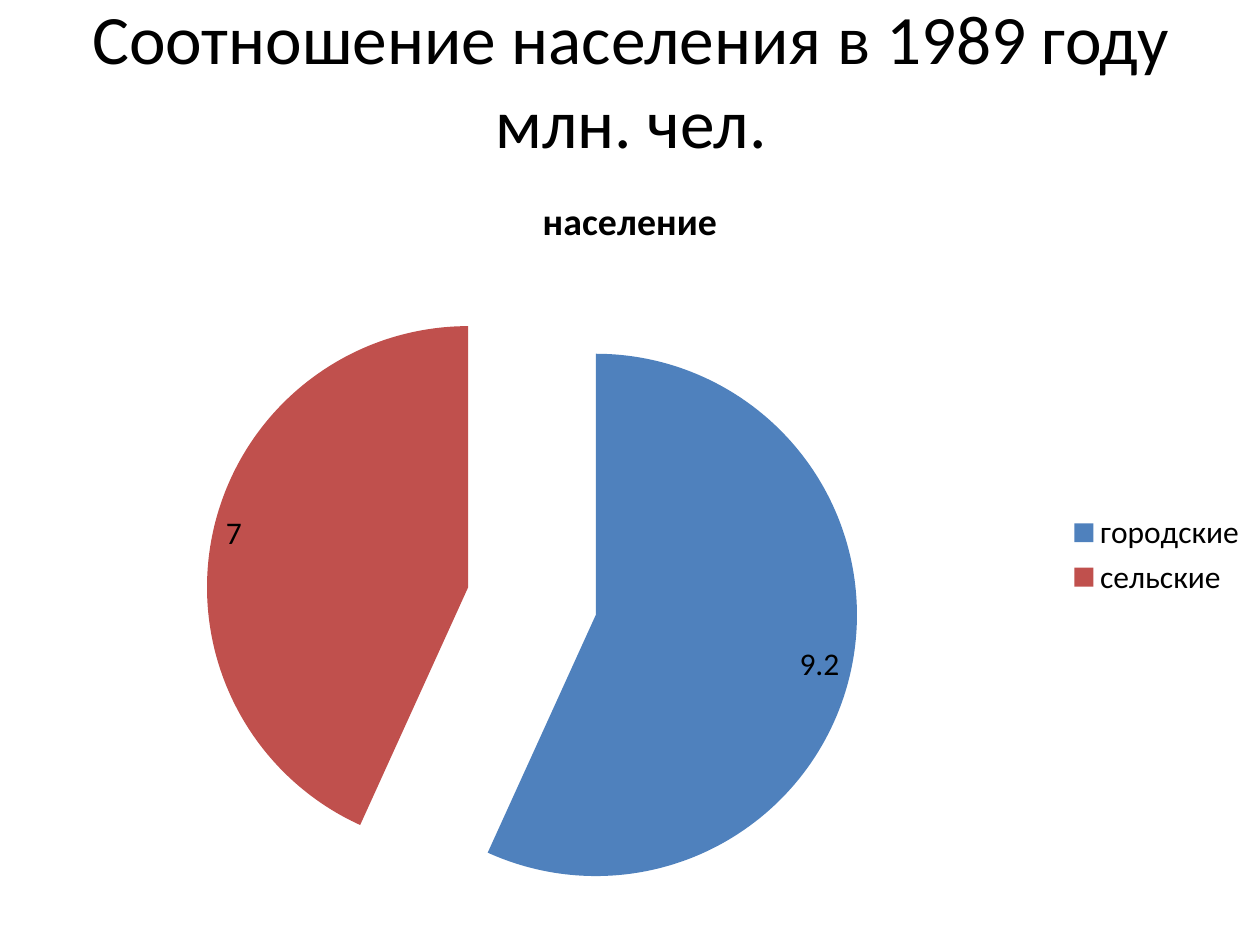
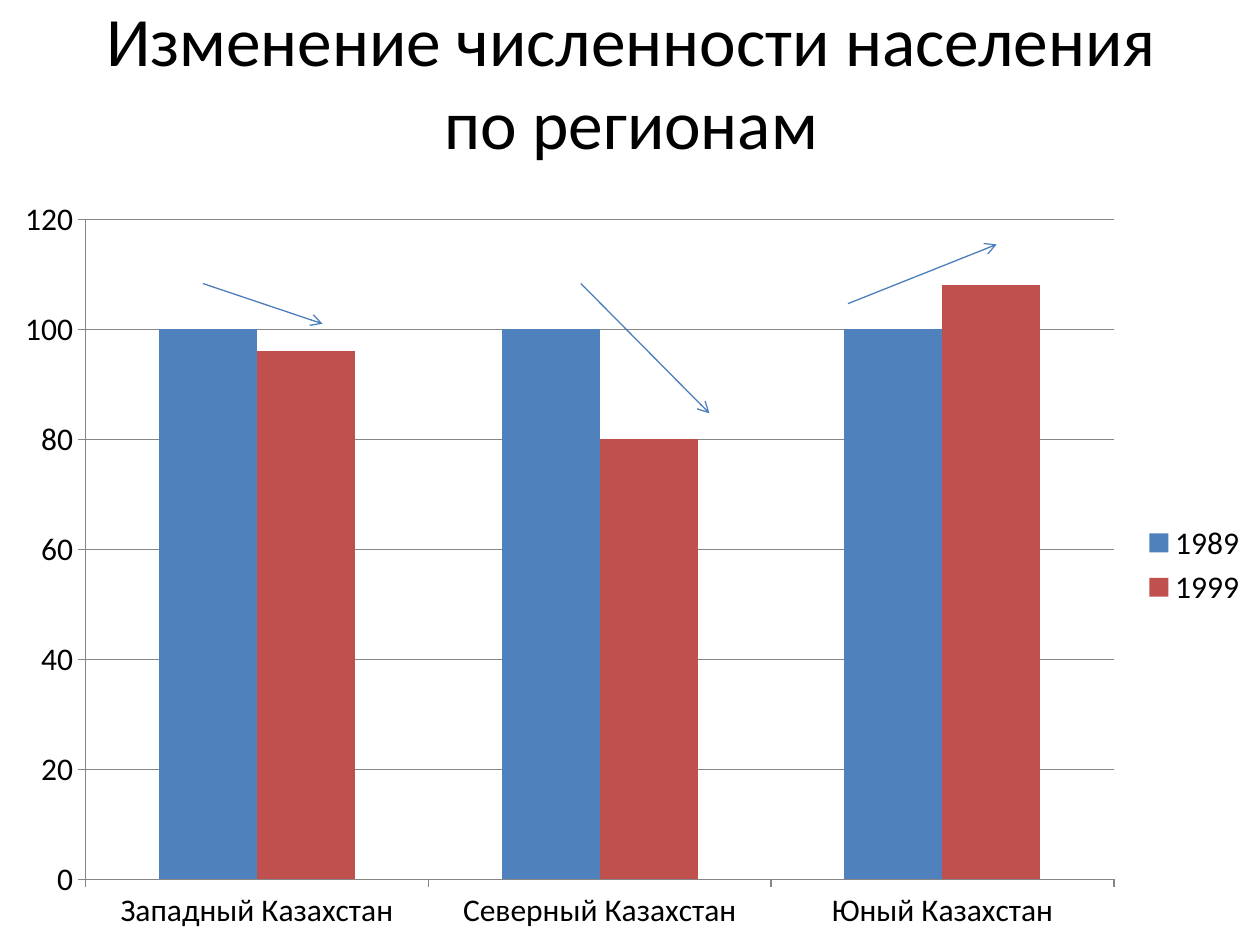
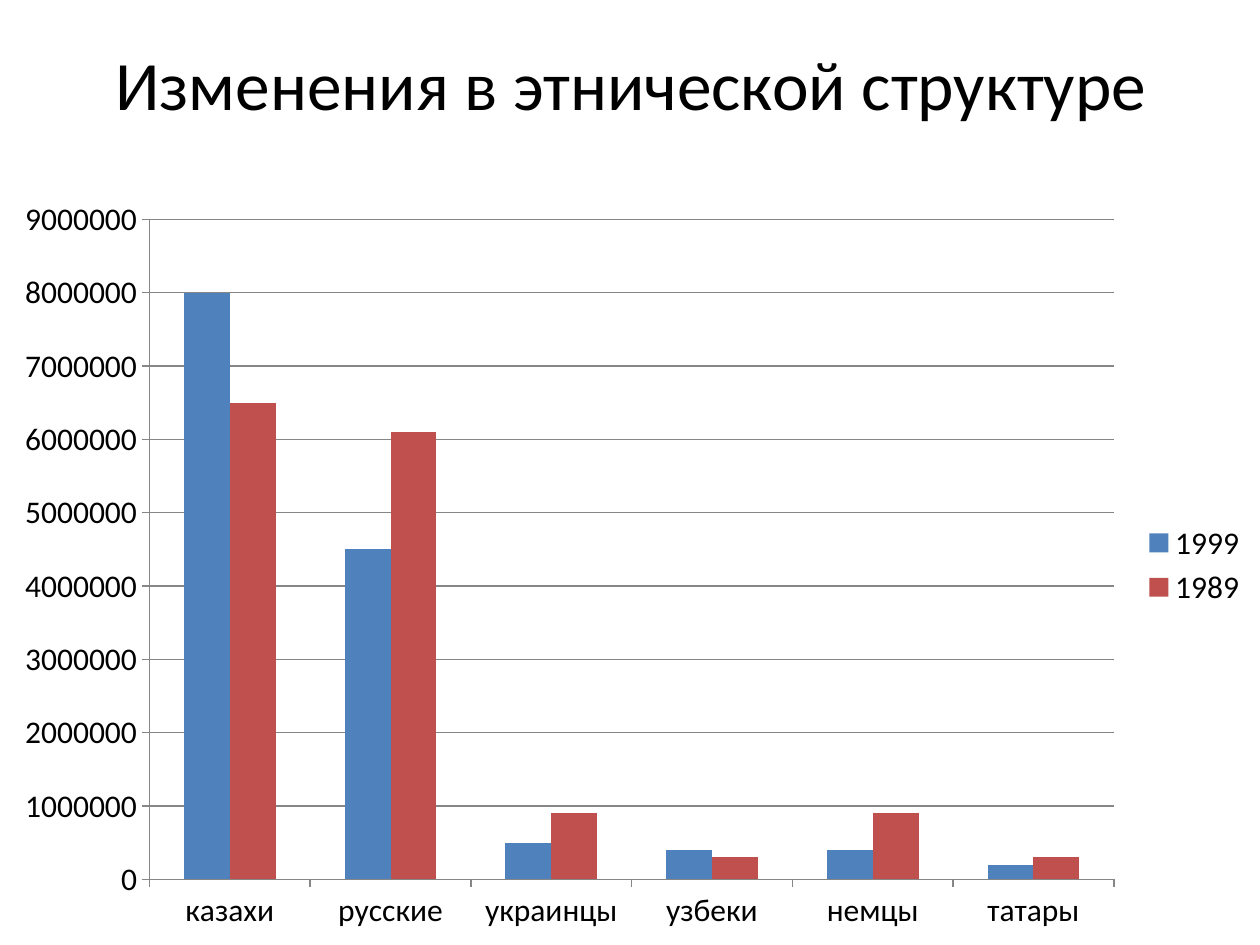
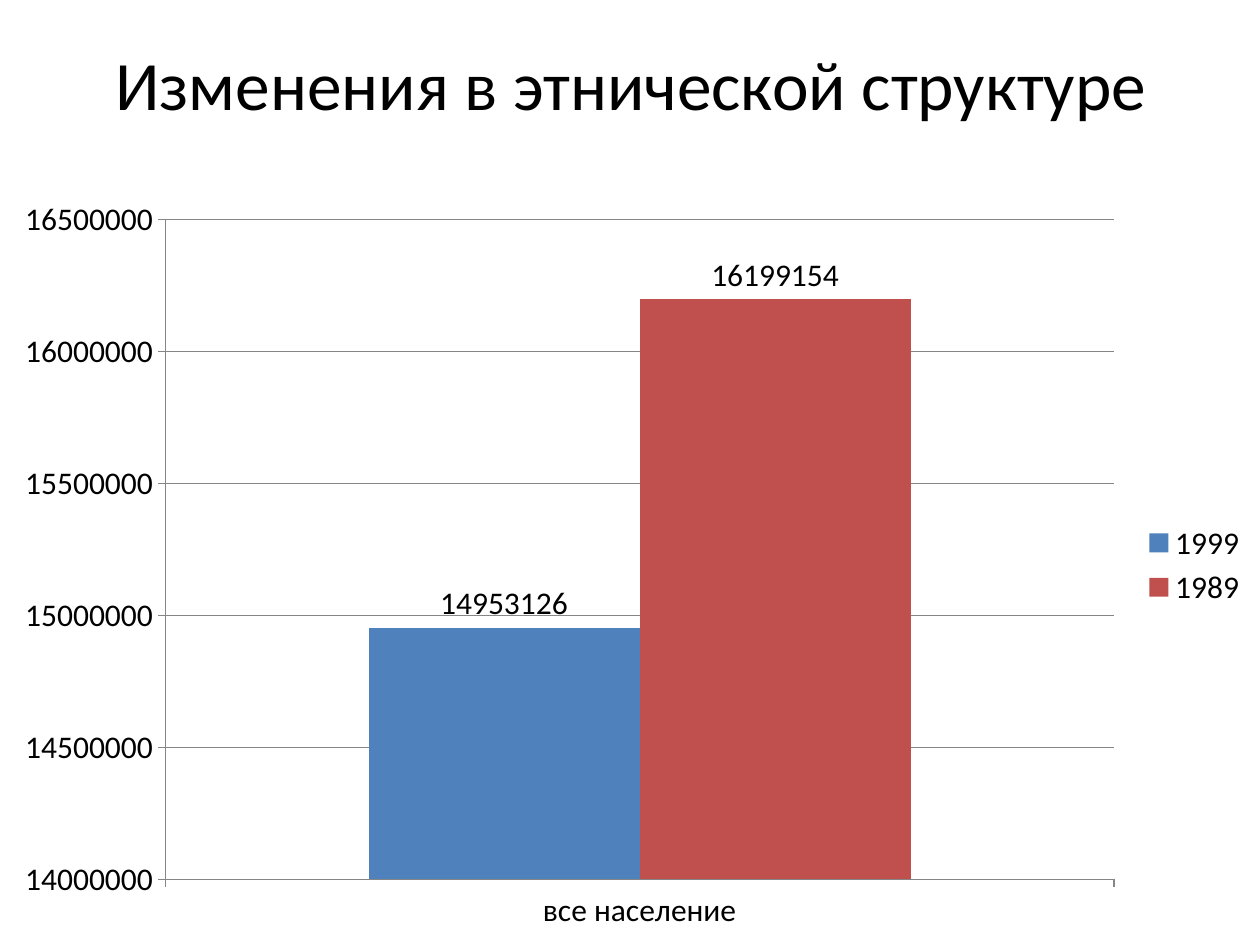
from lxml import etree
from pptx import Presentation
from pptx.chart.data import CategoryChartData
from pptx.dml.color import RGBColor
from pptx.enum.chart import XL_CHART_TYPE, XL_LABEL_POSITION, XL_LEGEND_POSITION, XL_TICK_MARK
from pptx.enum.shapes import MSO_CONNECTOR
from pptx.enum.text import MSO_ANCHOR, PP_ALIGN
from pptx.oxml.ns import qn
from pptx.util import Inches, Pt

FONT = "Calibri"
BLACK, GREY, ARROW_BLUE = "000000", "868686", "4B7EBC"
PALETTE = ["4F81BD", "C0504D"]


def color(hex_code):
    return RGBColor.from_string(hex_code)


def add_chart_slide(heading, heading_top, chart_type, chart_top, categories, series):
    """Add a slide with its heading, and a chart that fills the rest."""
    slide = prs.slides.add_slide(prs.slide_layouts[6])
    title = slide.shapes.add_textbox(Inches(0.51), Inches(heading_top), Inches(9), Inches(1.25))
    frame = title.text_frame
    frame.word_wrap = True
    frame.vertical_anchor = MSO_ANCHOR.MIDDLE
    frame.text = heading
    paragraph = frame.paragraphs[0]
    paragraph.alignment = PP_ALIGN.CENTER
    font = paragraph.runs[0].font
    font.name, font.size, font.color.rgb = FONT, Pt(39.6), color(BLACK)

    data = CategoryChartData()
    data.categories = categories
    for name, values in series.items():
        data.add_series(name, values)
    chart = slide.shapes.add_chart(
        chart_type, Inches(0), Inches(chart_top), Inches(10), Inches(7.5 - chart_top), data).chart
    chart.font.name, chart.font.size, chart.font.color.rgb = FONT, Pt(18), color(BLACK)
    chart.has_legend = True
    chart.legend.position = XL_LEGEND_POSITION.RIGHT
    chart.legend.include_in_layout = False
    return slide, chart


prs = Presentation()
prs.slide_width, prs.slide_height = Inches(10), Inches(7.5)

# Slide 1: urban and rural population
_, population = add_chart_slide(
    "Соотношение населения в 1989 году млн. чел.", 0, XL_CHART_TYPE.PIE, 1.31,
    ["городские", "сельские"], {"население": [9.2, 7]})
population.has_title = True
population.chart_title.text_frame.text = "население"
caption = population.chart_title.text_frame.paragraphs[0].runs[0].font
caption.name, caption.size, caption.bold = FONT, Pt(21.6), True
caption.color.rgb = color(BLACK)
population.plots[0].vary_by_categories = True
slices = population.plots[0].series[0]
slices.data_labels.show_value = True
for index, hue in enumerate(PALETTE):
    fill = slices.points[index].format.fill
    fill.solid()
    fill.fore_color.rgb = color(hue)
explosion = etree.Element(qn("c:explosion"), val="25")
slices._element.find(qn("c:tx")).addnext(explosion)

# Slides 2 to 4: heading, heading top, categories, series, axis (min, max, step), labels
comparisons = [
    ("Изменение численности населения по регионам", 0.01,
     ["Западный Казахстан", "Северный Казахстан", "Юный Казахстан"],
     {"1989": [100, 100, 100], "1999": [96, 80, 108]},
     (0, 120, 20), False),
    ("Изменения в этнической структуре", 0.03,
     ["казахи", "русские", "украинцы", "узбеки", "немцы", "татары"],
     {"1999": [8000000, 4500000, 500000, 400000, 400000, 200000],
      "1989": [6500000, 6100000, 900000, 300000, 900000, 300000]},
     (0, 9000000, 1000000), False),
    ("Изменения в этнической структуре", 0.03,
     ["все население"],
     {"1999": [14953126], "1989": [16199154]},
     (14000000, 16500000, 500000), True),
]
for heading, top, categories, series, scale, labelled in comparisons:
    slide, columns = add_chart_slide(
        heading, top, XL_CHART_TYPE.COLUMN_CLUSTERED, 1.47, categories, series)
    columns.has_title = False
    plot = columns.plots[0]
    plot.vary_by_categories = False
    plot.gap_width, plot.overlap = 150, 0
    for year, hue in zip(plot.series, PALETTE):
        year.format.fill.solid()
        year.format.fill.fore_color.rgb = color(hue)
        if labelled:
            year.data_labels.show_value = True
            year.data_labels.position = XL_LABEL_POSITION.OUTSIDE_END

    # Axes and gridlines
    amounts = columns.value_axis
    amounts.minimum_scale, amounts.maximum_scale, amounts.major_unit = scale
    amounts.has_major_gridlines = True
    for axis in (columns.category_axis, amounts):
        axis.major_tick_mark = XL_TICK_MARK.OUTSIDE
        axis.minor_tick_mark = XL_TICK_MARK.NONE
    for part in (columns.category_axis, amounts, amounts.major_gridlines):
        part.format.line.color.rgb = color(GREY)
        part.format.line.width = Pt(0.75)

# Trend arrows over the regions on slide 2
trends = [(1.61, 2.25, 2.56, 2.57), (4.61, 2.25, 5.63, 3.28), (6.73, 2.41, 7.91, 1.94)]
for ends in trends:
    trend = prs.slides[1].shapes.add_connector(MSO_CONNECTOR.STRAIGHT, *map(Inches, ends))
    trend.line.color.rgb = color(ARROW_BLUE)
    trend.line.width = Pt(0.75)
    properties = trend._element.spPr
    etree.SubElement(properties.find(qn("a:ln")), qn("a:tailEnd"), type="arrow")
    etree.SubElement(properties, qn("a:effectLst"))

prs.save("out.pptx")
